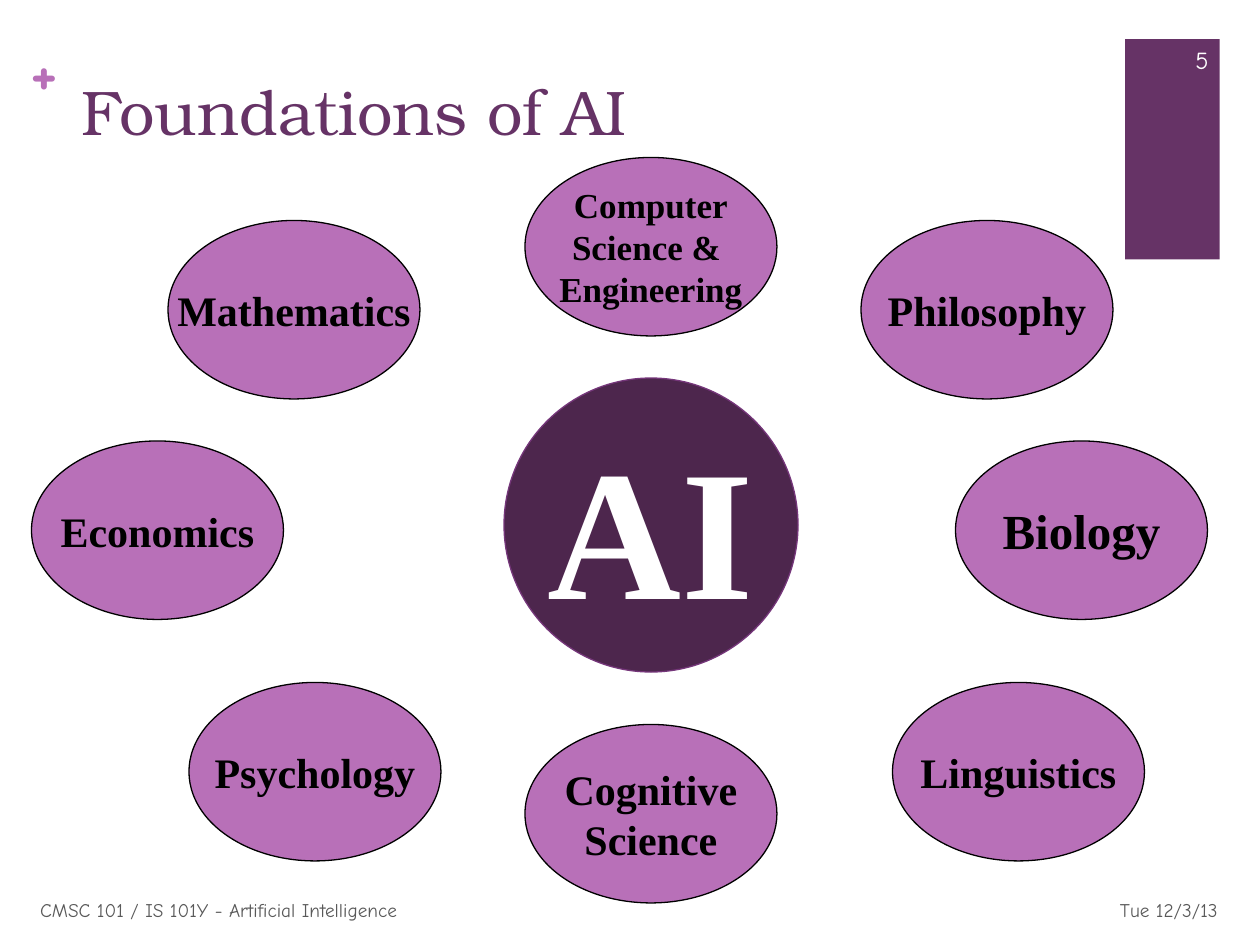
from dataclasses import dataclass
from pptx import Presentation
from pptx.dml.color import RGBColor as Rgb
from pptx.enum.shapes import MSO_SHAPE as Shp
from pptx.enum.text import MSO_ANCHOR as Anc, PP_ALIGN as Al
from pptx.util import Inches, Pt

COLS, ROWS = 120, 90
UNIT = Inches(10) // COLS


@dataclass(frozen=True)
class Theme:
    plum: str = "663366"
    lilac: str = "B870B8"
    dark: str = "4D264D"
    rim: str = "75367A"
    black: str = "000000"
    white: str = "FFFFFF"
    gray: str = "595959"
    head: str = "TeX Gyre Bonum"
    body: str = "Comic Neue"
    node: str = "Times New Roman"
    title: int = 36
    hub: int = 106
    large: int = 28
    topic: int = 24
    small: int = 20
    page: int = 14
    foot: int = 11


T = Theme()

# Column and row within the map, type size, lines of text
TOPICS = [
    (47, 0, T.small, ["Computer", "Science & ", "Engineering"]),
    (13, 6, T.topic, ["Mathematics"]),
    (47, 54, T.topic, ["Cognitive", "Science"]),
    (79, 6, T.topic, ["Philosophy"]),
    (15, 50, T.topic, ["Psychology"]),
    (82, 50, T.topic, ["Linguistics"]),
    (88, 27, T.large, ["Biology"]),
    (0, 27, T.topic, ["Economics"]),
]


def inner(box, col, row, wide, high):
    """Box in slide units, from a place relative to the given box."""
    return box[0] + col, box[1] + row, wide, high


def scale(box):
    return [round(n * UNIT) for n in box]


def write(frame, lines, font, size, tint, align=Al.LEFT, bold=False):
    for i, line in enumerate(lines):
        para = frame.paragraphs[0] if i == 0 else frame.add_paragraph()
        para.alignment = align
        run = para.add_run()
        run.text = line
        run.font.name = font
        run.font.size = Pt(size)
        run.font.bold = bold
        run.font.color.rgb = Rgb.from_string(tint)


def label(slide, box, text, font, size, tint, align=Al.LEFT,
          anchor=Anc.MIDDLE, bold=False):
    frame = slide.shapes.add_textbox(*scale(box)).text_frame
    frame.word_wrap = True
    frame.vertical_anchor = anchor
    write(frame, [text], font, size, tint, align, bold)
    return frame


def solid(slide, kind, box, fill, line=None):
    shape = slide.shapes.add_shape(kind, *scale(box))
    shape.shadow.inherit = False
    shape.fill.solid()
    shape.fill.fore_color.rgb = Rgb.from_string(fill)
    if line:
        shape.line.color.rgb = Rgb.from_string(line)
        shape.line.width = Pt(0.75)
    else:
        shape.line.fill.background()
    return shape


def oval(slide, box, lines, size, fill, line, tint):
    frame = solid(slide, Shp.OVAL, box, fill, line).text_frame
    frame.word_wrap = False
    frame.vertical_anchor = Anc.MIDDLE
    write(frame, lines, T.node, size, tint, Al.CENTER, True)


def header(slide, box):
    solid(slide, Shp.RECTANGLE, inner(box, 107.16, 3.72, 9, 21), T.plum)
    plus = label(slide, inner(box, 2.88, 3, 3.36, 7.32), "+", T.body,
                 T.title, T.lilac, anchor=Anc.TOP, bold=True)
    plus.margin_left = plus.margin_right = 0
    plus.margin_top = plus.margin_bottom = 0
    label(slide, inner(box, 6.6, 6.36, 99.12, 14.64), "Foundations of AI",
          T.head, T.title, T.plum, anchor=Anc.TOP)
    label(slide, inner(box, 108.96, 3.24, 7.32, 4.8), "5",
          T.body, T.page, T.white, Al.RIGHT)


def radial(slide, box):
    """Central hub with its topics around it."""
    oval(slide, inner(box, 45, 21, 28, 28), ["AI"], T.hub,
         T.dark, T.rim, T.white)
    for col, row, size, lines in TOPICS:
        oval(slide, inner(box, col, row, 24, 17), lines, size,
             T.lilac, T.black, T.black)


def footer(slide, box):
    wide, high = box[2:]
    label(slide, inner(box, 0, 0, 80.4, high),
          "CMSC 101 / IS 101Y - Artificial Intelligence",
          T.body, T.foot, T.gray)
    label(slide, inner(box, wide - 28, 0, 28, high), "Tue 12/3/13",
          T.body, T.foot, T.gray, Al.RIGHT)


def main():
    deck = Presentation()
    deck.slide_width, deck.slide_height = COLS * UNIT, ROWS * UNIT
    slide = deck.slides.add_slide(deck.slide_layouts[6])
    header(slide, (0, 0, COLS, 25))
    radial(slide, (3, 15, 112, 71))
    footer(slide, (2.64, 84.24, 114.52, 4.8))
    deck.save("out.pptx")


if __name__ == "__main__":
    main()
